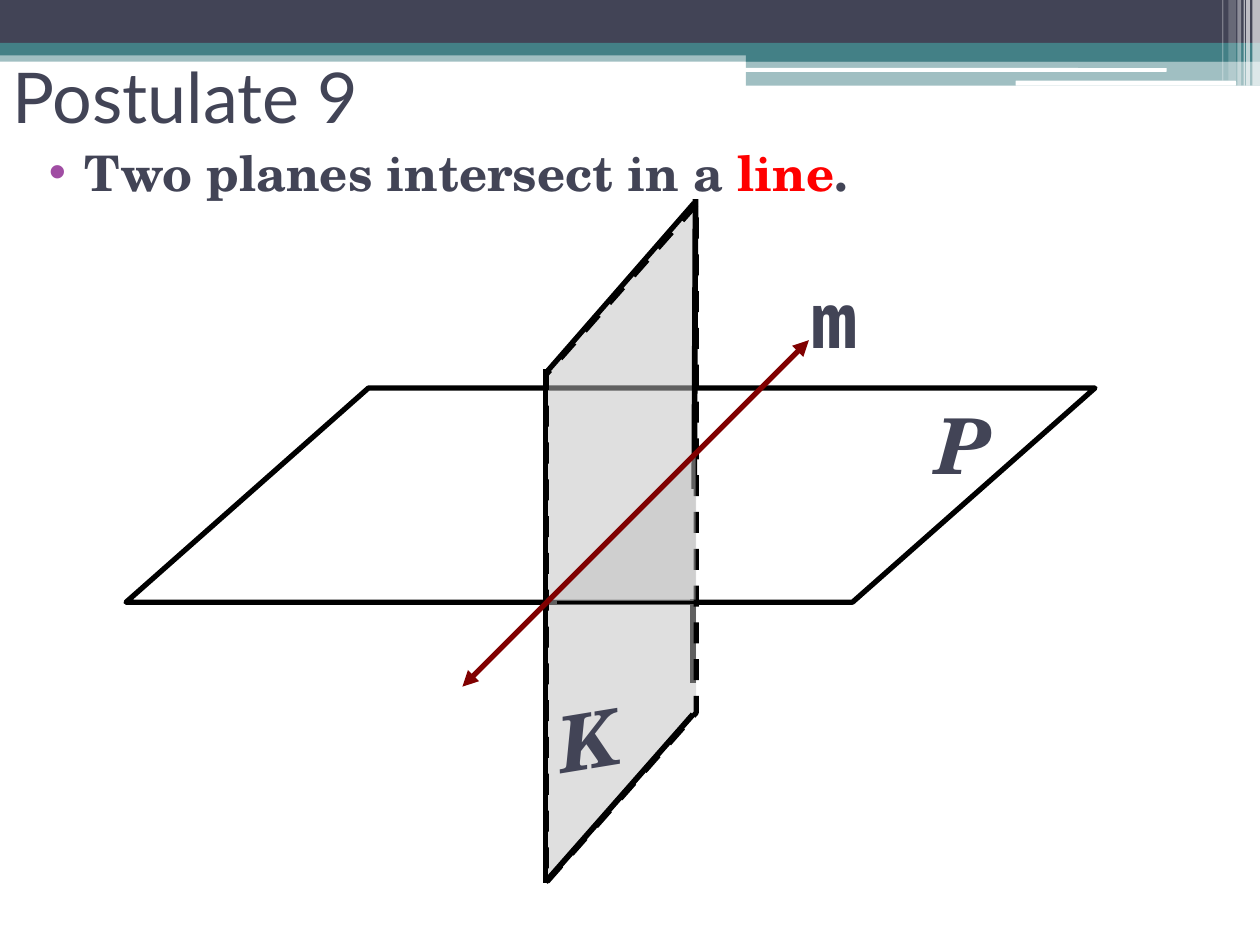
from dataclasses import dataclass

from lxml import etree
from pptx import Presentation
from pptx.dml.color import RGBColor
from pptx.enum.dml import MSO_LINE
from pptx.enum.shapes import MSO_CONNECTOR, MSO_SHAPE
from pptx.enum.text import MSO_ANCHOR, MSO_AUTO_SIZE, PP_ALIGN
from pptx.oxml.ns import qn
from pptx.util import Inches, Pt

RECTANGLE = MSO_SHAPE.RECTANGLE
ROUNDED = MSO_SHAPE.ROUNDED_RECTANGLE
PARALLELOGRAM = MSO_SHAPE.PARALLELOGRAM
STRAIGHT = MSO_CONNECTOR.STRAIGHT
DASH = MSO_LINE.DASH
LEFT = PP_ALIGN.LEFT
MIDDLE = MSO_ANCHOR.MIDDLE
NO_AUTOFIT = MSO_AUTO_SIZE.NONE


@dataclass(frozen=True)
class Theme:
    ink: str = "424456"
    teal: str = "438086"
    white: str = "FFFFFF"
    black: str = "000000"
    silver: str = "C0C0C0"
    maroon: str = "800000"
    red: str = "FF0000"
    bullet: str = "A04DA3"
    title_font: str = "Lato"
    body_font: str = "TeX Gyre Schola"
    mono_font: str = "Noto Sans Mono"
    title_size: int = 40
    body_size: int = 28
    label_size: int = 44


THEME = Theme()
SLANT = 1.132

# left, top, width, height, colour, opacity in percent
BANDS = [
    (0, 0.4, 10, 0.09, THEME.teal, 50),
    (0, 0, 10, 0.34, THEME.ink, 100),
    (0, 0.34, 10, 0.1, THEME.teal, 100),
    (5.92, 0.39, 4.08, 0.1, THEME.teal, 100),
    (5.92, 0.48, 4.08, 0.2, THEME.teal, 50),
]
PILLS = [(5.91, 0.54, 3.35, 0.03), (8.06, 0.64, 1.75, 0.04)]
# left, width, height, opacity in percent
STRIPES = [
    (9.94, 0.06, 0.68, 65),
    (9.89, 0.03, 0.68, 65),
    (9.87, 0.01, 0.68, 60),
    (9.82, 0.03, 0.68, 40),
    (9.75, 0.06, 0.64, 20),
    (9.7, 0.01, 0.64, 30),
]
# start, end, width in points
PLANE_K_EDGES = [
    ((4.35, 2.94), (5.51, 1.61), 3),
    ((4.33, 2.93), (4.33, 7.01), 3),
    ((4.33, 7), (5.5, 5.67), 3.25),
    ((5.52, 1.58), (5.51, 3.88), 3.25),
]


def inches(values):
    return [Inches(value) for value in values]


def set_fill(shape, color, opacity=100):
    shape.fill.solid()
    shape.fill.fore_color.rgb = RGBColor.from_string(color)
    if opacity < 100:
        color_element = shape.fill._xPr.find(qn("a:solidFill"))[0]
        etree.SubElement(color_element, qn("a:alpha"), val=str(opacity * 1000))


def set_line(shape, color, width):
    shape.line.color.rgb = RGBColor.from_string(color)
    shape.line.width = Pt(width)


def add_block(shapes, kind, box, color, opacity=100):
    shape = shapes.add_shape(kind, *inches(box))
    shape.shadow.inherit = False
    set_fill(shape, color, opacity)
    shape.line.fill.background()
    return shape


def add_plane(shapes, box):
    plane = shapes.add_shape(PARALLELOGRAM, *inches(box))
    plane.shadow.inherit = False
    plane.adjustments[0] = SLANT
    plane.fill.background()
    set_line(plane, THEME.black, 3)
    return plane


def add_line(shapes, start, end, width, color=THEME.black, arrows=False):
    line = shapes.add_connector(STRAIGHT, *inches(start + end))
    set_line(line, color, width)
    if arrows:
        for tag in ("a:headEnd", "a:tailEnd"):
            etree.SubElement(line.line._get_or_add_ln(), qn(tag), type="triangle")
    etree.SubElement(line._element.spPr, qn("a:effectLst"))


def add_run(paragraph, text, size, font, color, **formats):
    run = paragraph.add_run()
    run.text = text
    run.font.color.rgb = RGBColor.from_string(color)
    for name, value in {"size": Pt(size), "name": font, **formats}.items():
        setattr(run.font, name, value)


def add_label(shapes, box, text, font, italic=True, rotation=0):
    label = shapes.add_textbox(*inches(box))
    label.rotation = rotation
    label.text_frame.word_wrap = False
    add_run(label.text_frame.paragraphs[0], text, THEME.label_size, font,
            THEME.ink, bold=True, italic=italic)


def add_header(shapes):
    for *box, color, opacity in BANDS:
        add_block(shapes, RECTANGLE, box, color, opacity)
    for box in PILLS:
        add_block(shapes, ROUNDED, box, THEME.white)
    for left, width, height, opacity in STRIPES:
        add_block(shapes, RECTANGLE, (left, 0, width, height), THEME.white, opacity)


def add_plane_k(shapes):
    group = shapes.add_group_shape().shapes
    plane = add_plane(group, (2.24, 3.72, 5.38, 1.19))
    set_fill(plane, THEME.silver, 50)
    plane.line.dash_style = DASH
    plane.rotation = 270
    plane._element.spPr.xfrm.set("flipH", "1")
    for start, end, width in PLANE_K_EDGES:
        add_line(group, start, end, width)


def add_shaded_corner(shapes):
    """Darken the part of plane K that lies below line m."""
    builder = shapes.build_freeform(Inches(4.33), Inches(4.76))
    corners = [inches(point) for point in ((5.52, 3.61), (5.52, 4.76))]
    builder.add_line_segments(corners, close=True)
    corner = builder.convert_to_shape()
    corner.shadow.inherit = False
    set_fill(corner, THEME.silver, 50)
    corner.line.fill.background()


def add_line_m(shapes):
    group = shapes.add_group_shape().shapes
    add_line(group, (3.67, 5.45), (6.42, 2.7), 3, THEME.maroon, arrows=True)
    add_label(group, (6.34, 2.11, 0.58, 0.83), "m", THEME.mono_font, italic=False)


def format_title(title):
    box = dict(zip(("left", "top", "width", "height"), inches((0, 0.17, 9, 1.17))))
    for name, value in box.items():
        setattr(title, name, value)
    frame = title.text_frame
    frame.auto_size = NO_AUTOFIT
    frame.vertical_anchor = MIDDLE
    paragraph = frame.paragraphs[0]
    paragraph.alignment = LEFT
    add_run(paragraph, "Postulate 9", THEME.title_size, THEME.title_font, THEME.ink)


def add_statement(shapes):
    frame = shapes.add_textbox(*inches((0.17, 1.08, 9, 1.25))).text_frame
    frame.word_wrap = True
    paragraph = frame.paragraphs[0]
    paragraph.space_before = Pt(3)
    properties = paragraph._p.get_or_add_pPr()
    properties.set("marL", str(Inches(0.4)))
    properties.set("indent", str(Inches(-0.28)))
    bullet_color = etree.SubElement(properties, qn("a:buClr"))
    etree.SubElement(bullet_color, qn("a:srgbClr"), val=THEME.bullet)
    etree.SubElement(properties, qn("a:buFont"), typeface="Arial")
    etree.SubElement(properties, qn("a:buChar"), char="•")
    for text, color in (("Two planes intersect in a ", THEME.ink),
                        ("line", THEME.red), (".", THEME.ink)):
        add_run(paragraph, text, THEME.body_size, THEME.body_font, color, bold=True)


def main():
    presentation = Presentation()
    presentation.slide_width, presentation.slide_height = inches((10, 7.5))
    slide = presentation.slides.add_slide(presentation.slide_layouts[5])
    shapes = slide.shapes
    format_title(shapes.title)
    add_header(shapes)
    add_plane(shapes, (1, 3.08, 7.69, 1.7))
    add_label(shapes, (7.33, 3.11, 0.61, 0.83), "P", THEME.body_font)
    add_line(shapes, (5.5, 4.75), (5.5, 5.42), 3.25)
    add_plane_k(shapes)
    add_label(shapes, (4.33, 5.45, 0.64, 0.83), "K", THEME.body_font, rotation=350.7)
    add_shaded_corner(shapes)
    add_line(shapes, (4.42, 4.78), (5.58, 4.78), 1.5)
    add_line_m(shapes)
    add_statement(shapes)
    presentation.save("out.pptx")


if __name__ == "__main__":
    main()
